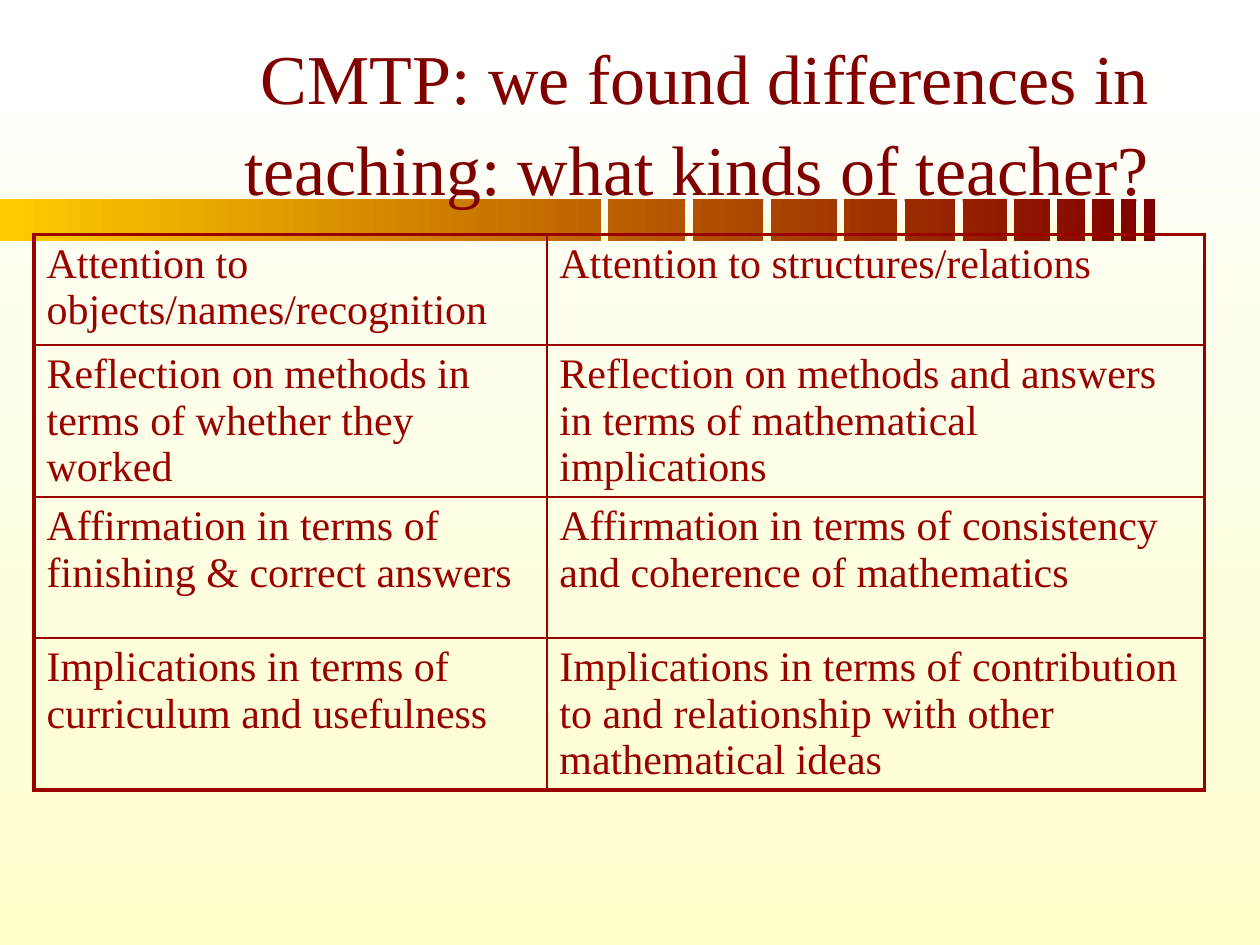
from lxml.etree import SubElement
from pptx import Presentation
from pptx.dml.color import RGBColor
from pptx.enum.shapes import MSO_SHAPE
from pptx.enum.text import MSO_ANCHOR, MSO_AUTO_SIZE, PP_ALIGN
from pptx.oxml.ns import qn
from pptx.util import Inches, Pt

FONT = "Times New Roman"
COLORS = {"white": "FFFFFF", "cream": "FFFFCC", "gold": "FFCC00",
          "maroon": "800000", "red": "990000"}
ACROSS, DOWN = 0, 270  # gradient angles, counter-clockwise
THIN, THICK = 1, 2.25

BAR_TOP, BAR_H, GAP_W = 1.58, 0.33, 0.06
GAPS = [4.77, 5.44, 6.06, 6.64, 7.12, 7.58, 7.99, 8.33, 8.61, 8.84, 9.02]

ROWS = [
    ("Attention to objects/names/recognition",
     "Attention to structures/relations"),
    ("Reflection on methods in terms of whether they worked",
     "Reflection on methods and answers in terms of mathematical implications"),
    ("Affirmation in terms of finishing & correct answers",
     "Affirmation in terms of consistency and coherence of mathematics"),
    ("Implications in terms of curriculum and usefulness",
     "Implications in terms of contribution to and relationship with other "
     "mathematical ideas"),
]


class Deck:
    def __init__(self, prs):
        self.s = prs.slides.add_slide(prs.slide_layouts[5])

    def gradient(self, fill, start, end, angle):
        fill.gradient()
        fill.gradient_angle = angle
        for stop, name in zip(fill.gradient_stops, (start, end)):
            stop.color.rgb = RGBColor.from_string(COLORS[name])

    def background(self, start, end):
        self.gradient(self.s.background.fill, start, end, DOWN)

    def rect(self, x, y, w, h, start, end, angle):
        sp = self.s.shapes.add_shape(MSO_SHAPE.RECTANGLE, Inches(x), Inches(y),
                                     Inches(w), Inches(h))
        sp.shadow.inherit = False
        sp.line.fill.background()
        self.gradient(sp.fill, start, end, angle)

    def run(self, p, text, size, color):
        r = p.add_run()
        r.text = text
        r.font.name = FONT
        r.font.size = Pt(size)
        r.font.bold = False
        r.font.color.rgb = RGBColor.from_string(COLORS[color])

    def title(self, text, x, y, w, h):
        sp = self.s.shapes.title
        sp.left, sp.top, sp.width, sp.height = map(Inches, (x, y, w, h))
        tf = sp.text_frame
        tf.word_wrap = True
        tf.auto_size = MSO_AUTO_SIZE.NONE
        tf.vertical_anchor = MSO_ANCHOR.BOTTOM
        p = tf.paragraphs[0]
        p.alignment = PP_ALIGN.RIGHT
        p.line_spacing = 1.08
        self.run(p, text, 40, "maroon")
        # Bring the title in front of the bar
        sp.element.getparent().append(sp.element)

    def border(self, cell, side, width):
        ln = SubElement(cell._tc.get_or_add_tcPr(), qn(f"a:ln{side}"),
                        w=str(Pt(width)))
        fill = SubElement(ln, qn("a:solidFill"))
        SubElement(fill, qn("a:srgbClr"), val=COLORS["red"])

    def table(self, rows, x, y, widths, heights):
        frame = self.s.shapes.add_table(len(rows), len(widths), Inches(x), Inches(y),
                                        Inches(sum(widths)), Inches(sum(heights)))
        tbl = frame.table
        tbl.first_row = tbl.horz_banding = False
        for col, w in zip(tbl.columns, widths):
            col.width = Inches(w)
        for row, h in zip(tbl.rows, heights):
            row.height = Inches(h)
        last_row, last_col = len(rows) - 1, len(widths) - 1
        for i, texts in enumerate(rows):
            for j, text in enumerate(texts):
                cell = tbl.cell(i, j)
                self.run(cell.text_frame.paragraphs[0], text, 24, "red")
                # Thick outer frame, thin inner lines
                outer = {"L": j == 0, "R": j == last_col,
                         "T": i == 0, "B": i == last_row}
                for side, is_outer in outer.items():
                    self.border(cell, side, THICK if is_outer else THIN)
                cell.fill.background()


def main():
    prs = Presentation()
    prs.slide_width, prs.slide_height = Inches(10), Inches(7.5)
    deck = Deck(prs)
    deck.background("white", "cream")

    # Bar cut into ever shorter blocks
    deck.rect(0, BAR_TOP, 9.17, BAR_H, "gold", "maroon", ACROSS)
    for x in GAPS:
        deck.rect(x, BAR_TOP, GAP_W, BAR_H, "white", "cream", DOWN)

    # Title and comparison table
    deck.title("CMTP: we found differences in teaching: what kinds of teacher?",
               0.74, 0.19, 8.48, 1.52)
    deck.table(ROWS, 0.27, 1.86, [4.07, 5.22], [0.88, 1.2, 1.12, 1.2])
    prs.save("out.pptx")


if __name__ == "__main__":
    main()
